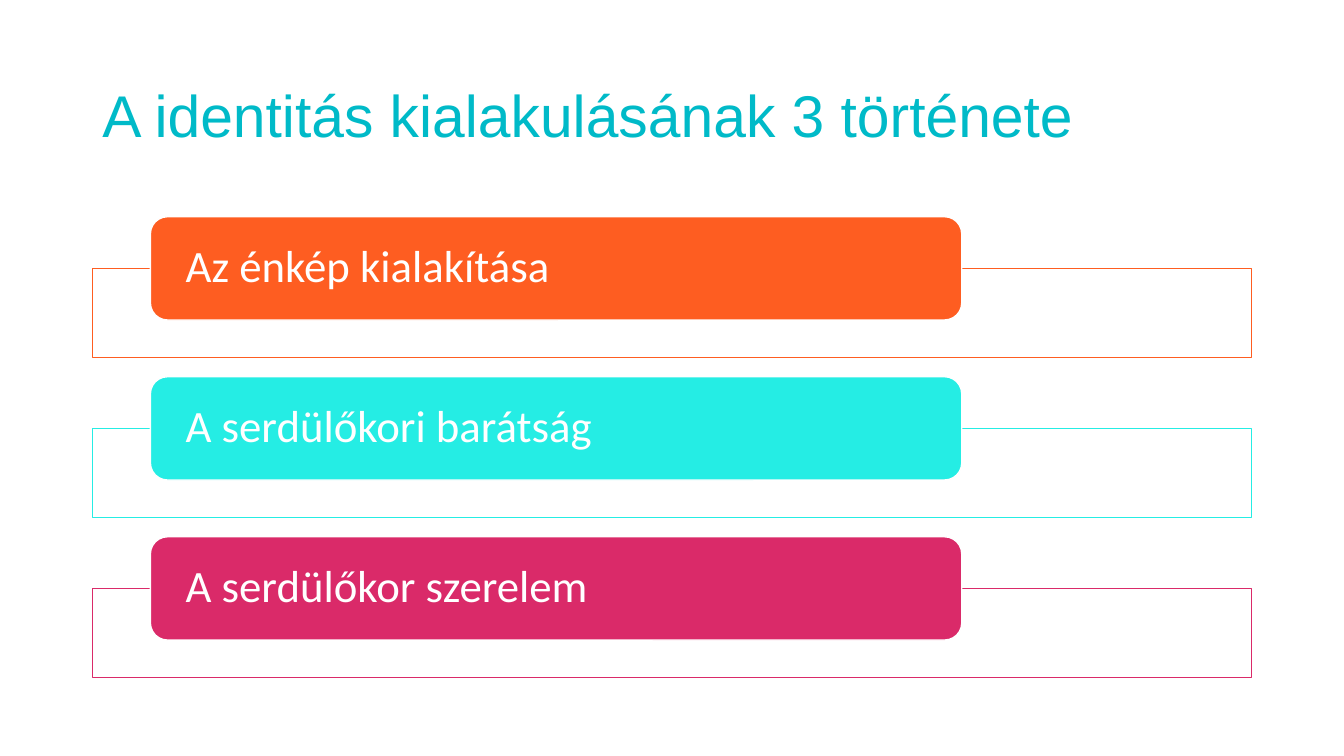
import pptx
import pptx.dml.color
import pptx.enum.shapes
import pptx.enum.text
import pptx.util

Pt = pptx.util.Pt
ANCHOR = pptx.enum.text.MSO_ANCHOR
SHAPE = pptx.enum.shapes.MSO_SHAPE

TITLE = "A identitás kialakulásának 3 története"
STORIES = [
    ("Az énkép kialakítása", "orange"),
    ("A serdülőkori barátság", "turquoise"),
    ("A serdülőkor szerelem", "pink"),
]
COLORS = {
    "title": "00BAC8",
    "white": "FFFFFF",
    "orange": "FE5D21",
    "turquoise": "25EDE4",
    "pink": "DA2A69",
}

SLIDE_SIZE = (960, 540)
TITLE_BOX = (66, 28.75, 840, 82.1)
FRAME_LEFT, FRAME_WIDTH, FRAME_HEIGHT = 66, 828, 63.5
BAR_LEFT, BAR_WIDTH, BAR_HEIGHT = 107.4, 579.6, 73.8
FIRST_BAR_TOP, STORY_PITCH = 154.8, 114.3


def rgb(color):
    return pptx.dml.color.RGBColor.from_string(COLORS[color])


def write_text(shape, text, *, font, size, color, anchor, margins):
    """Set one left-aligned paragraph; margins are (horizontal, vertical)."""
    frame = shape.text_frame
    frame.word_wrap = True
    frame.vertical_anchor = anchor
    frame.margin_left = frame.margin_right = Pt(margins[0])
    frame.margin_top = frame.margin_bottom = Pt(margins[1])
    paragraph = frame.paragraphs[0]
    paragraph.alignment = pptx.enum.text.PP_ALIGN.LEFT
    paragraph.line_spacing = 0.9
    run = paragraph.add_run()
    run.text = text
    run.font.name = font
    run.font.size = Pt(size)
    run.font.color.rgb = rgb(color)


def add_box(slide, kind, box, fill, line):
    shape = slide.shapes.add_shape(kind, *map(Pt, box))
    shape.shadow.inherit = False
    shape.fill.solid()
    shape.fill.fore_color.rgb = rgb(fill)
    shape.line.color.rgb = rgb(line)
    shape.line.width = Pt(1)
    return shape


def add_story(slide, top, text, color):
    frame_box = (FRAME_LEFT, top + BAR_HEIGHT / 2, FRAME_WIDTH, FRAME_HEIGHT)
    add_box(slide, SHAPE.RECTANGLE, frame_box, "white", color)
    bar_box = (BAR_LEFT, top, BAR_WIDTH, BAR_HEIGHT)
    bar = add_box(slide, SHAPE.ROUNDED_RECTANGLE, bar_box, color, "white")
    write_text(bar, text, font="Calibri", size=32, color="white",
               anchor=ANCHOR.MIDDLE, margins=(21.6, 0))


def main():
    presentation = pptx.Presentation()
    presentation.slide_width, presentation.slide_height = map(Pt, SLIDE_SIZE)
    slide = presentation.slides.add_slide(presentation.slide_layouts[6])

    title = slide.shapes.add_textbox(*map(Pt, TITLE_BOX))
    write_text(title, TITLE, font="Arial", size=42, color="title",
               anchor=ANCHOR.BOTTOM, margins=(7.2, 3.6))
    for index, (text, color) in enumerate(STORIES):
        add_story(slide, FIRST_BAR_TOP + index * STORY_PITCH, text, color)

    presentation.save("out.pptx")


if __name__ == "__main__":
    main()
